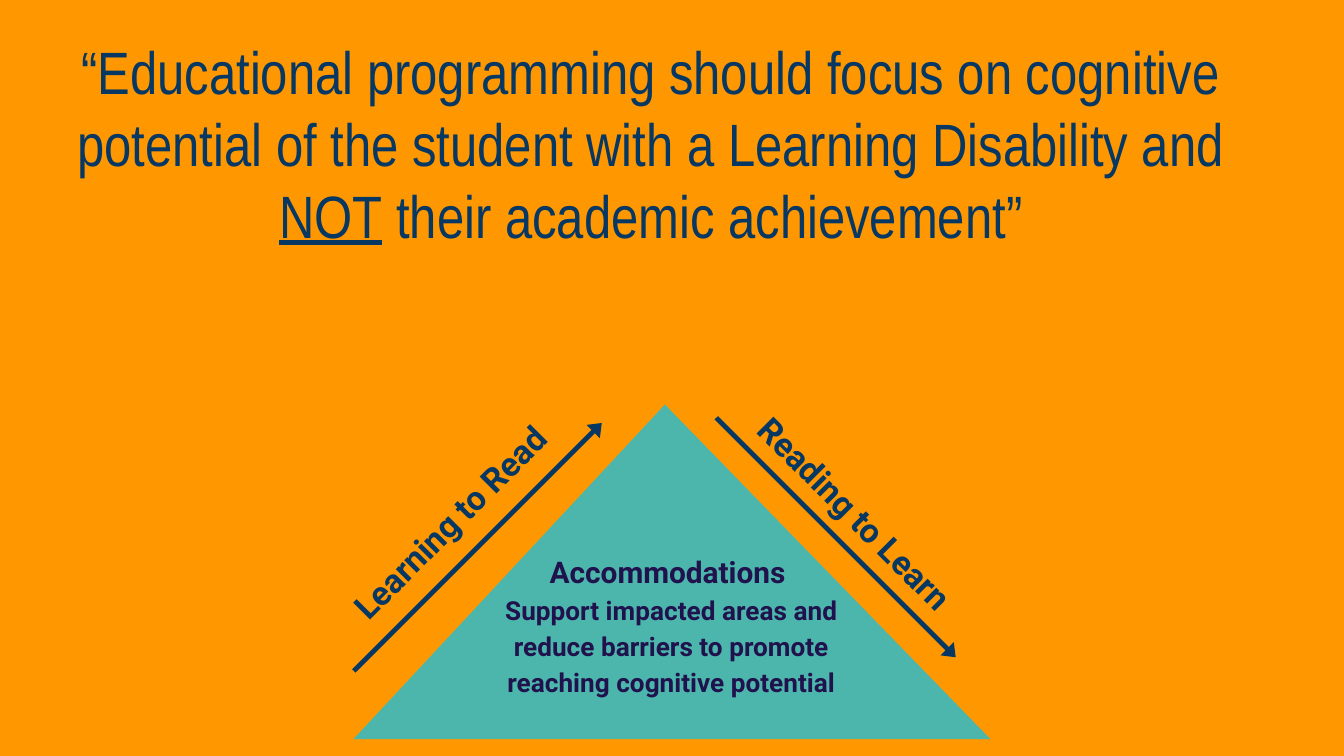
from pptx import Presentation
from pptx.dml.color import RGBColor
from pptx.enum.shapes import MSO_SHAPE
from pptx.enum.text import MSO_ANCHOR, MSO_AUTO_SIZE, PP_ALIGN
from pptx.util import Inches, Pt

ORANGE = RGBColor(0xFF, 0x98, 0x00)
NAVY = RGBColor(0x07, 0x37, 0x63)
TEAL = RGBColor(0x4D, 0xB6, 0xAC)
PURPLE = RGBColor(0x20, 0x12, 0x4D)


def add_run(paragraph, text, size, font, color, bold=False, underline=False):
    """Append one formatted run to a paragraph."""
    run = paragraph.add_run()
    run.text = text
    run.font.size = Pt(size)
    run.font.name = font
    run.font.color.rgb = color
    run.font.bold = bold
    run.font.underline = underline


def set_frame(frame, top=0.1):
    """Make a text frame wrap, with even insets and text at the top."""
    frame.word_wrap = True
    frame.auto_size = MSO_AUTO_SIZE.NONE
    frame.vertical_anchor = MSO_ANCHOR.TOP
    frame.margin_left = frame.margin_right = frame.margin_bottom = Inches(0.1)
    frame.margin_top = Inches(top)


def add_shape(slide, kind, left, top, width, height, color, adjustments):
    """Add a flat preset shape without outline or shadow."""
    shape = slide.shapes.add_shape(
        kind, Inches(left), Inches(top), Inches(width), Inches(height))
    shape.shadow.inherit = False
    shape.fill.solid()
    shape.fill.fore_color.rgb = color
    shape.line.fill.background()
    for index, value in enumerate(adjustments):
        shape.adjustments[index] = value
    return shape


def add_label(slide, left, top, width, height, lines, color):
    """Add a centred text box of bold (text, size) lines."""
    label = slide.shapes.add_textbox(
        Inches(left), Inches(top), Inches(width), Inches(height))
    frame = label.text_frame
    set_frame(frame)
    for index, (text, size) in enumerate(lines):
        paragraph = frame.add_paragraph() if index else frame.paragraphs[0]
        paragraph.alignment = PP_ALIGN.CENTER
        paragraph.line_spacing = 1.15
        add_run(paragraph, text, size, "Roboto", color, bold=True)
    return label


def fill_quote(slide, left, top, width, height):
    """Put the quotation in the title placeholder."""
    quote = slide.shapes.title
    quote.left, quote.top = Inches(left), Inches(top)
    quote.width, quote.height = Inches(width), Inches(height)
    set_frame(quote.text_frame, top=0)
    paragraph = quote.text_frame.paragraphs[0]
    paragraph.alignment = PP_ALIGN.CENTER
    for text, underline in (
        ("“Educational programming should focus on cognitive potential "
         "of the student with a Learning Disability and ", False),
        ("NOT", True),
        (" their academic achievement”", False),
    ):
        add_run(paragraph, text, 32, "Arial Narrow", NAVY, underline=underline)


def add_pyramid(slide, left, top, width, height):
    """Add the triangle with the accommodations text inside."""
    add_shape(slide, MSO_SHAPE.ISOSCELES_TRIANGLE,
              left, top, width, height, TEAL, [0.489])
    add_label(slide, left + 0.92, top + 0.97, 2.89, 1.28, [
        ("Accommodations ", 16),
        ("Support impacted areas and reduce barriers to promote "
         "reaching cognitive potential", 14),
    ], PURPLE)


def add_slope(slide, arrow_box, label_box, text, angle):
    """Add a slanted arrow and its parallel label."""
    arrow = add_shape(slide, MSO_SHAPE.RIGHT_ARROW, *arrow_box, NAVY,
                      [0.255, 0.643])
    label = add_label(slide, *label_box, [(text, 18)], NAVY)
    arrow.rotation = label.rotation = angle


def main():
    """Build and save the slide."""
    deck = Presentation()
    deck.slide_width = Inches(10)
    deck.slide_height = deck.slide_width * 9 // 16
    slide = deck.slides.add_slide(deck.slide_layouts[5])
    slide.background.fill.solid()
    slide.background.fill.fore_color.rgb = ORANGE
    fill_quote(slide, 0.44, 0.26, 8.81, 2.04)
    add_pyramid(slide, 2.63, 3.01, 4.74, 2.49)
    add_slope(slide, (2.25, 4, 2.61, 0.14), (2.03, 3.61, 2.53, 0.45),
              "Learning to Read", 315)
    add_slope(slide, (4.96, 3.93, 2.52, 0.14), (5.2, 3.55, 2.45, 0.41),
              "Reading to Learn", 45)
    deck.save("out.pptx")


if __name__ == "__main__":
    main()
